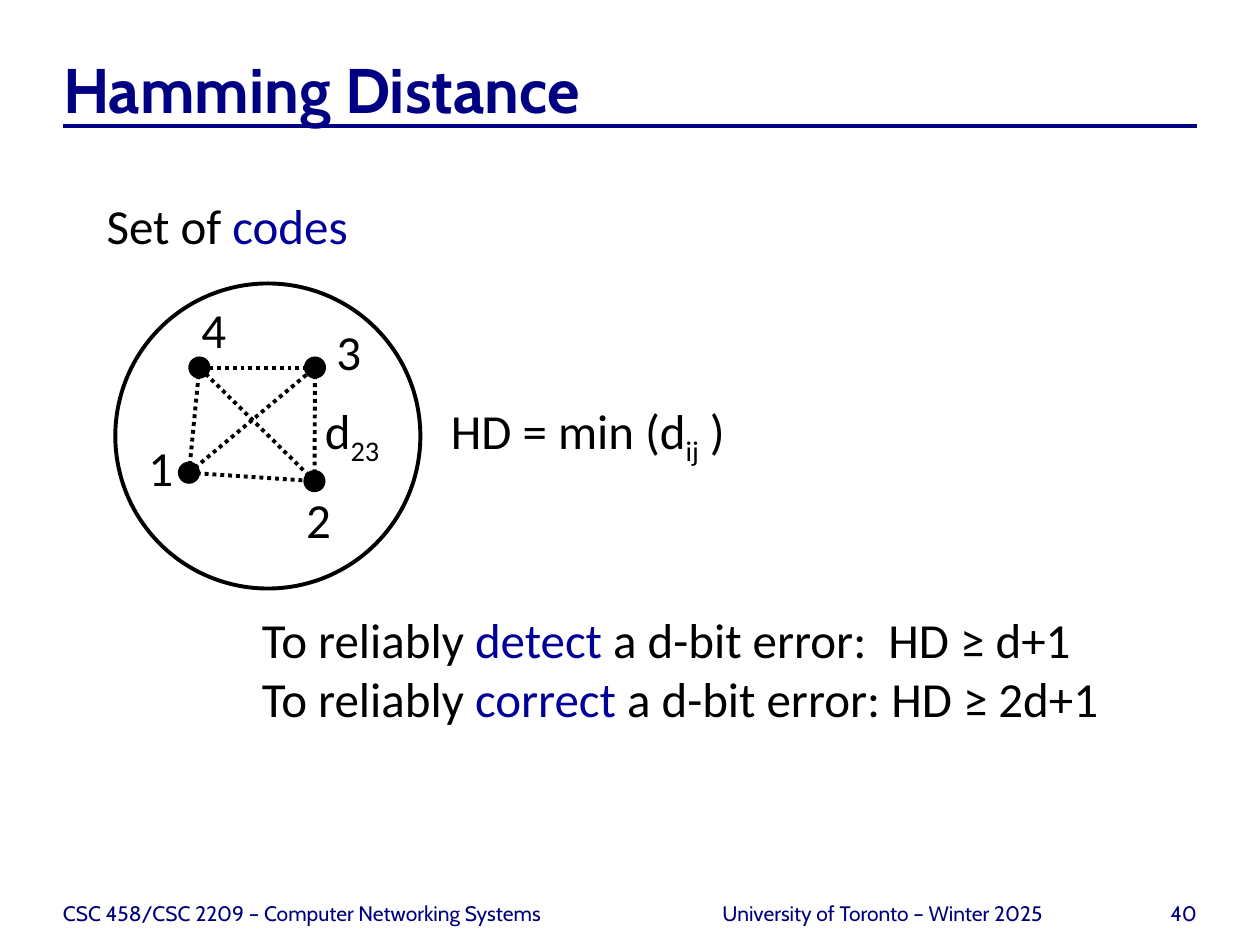
from dataclasses import dataclass
from itertools import combinations
from typing import NamedTuple

from lxml import etree
from pptx import Presentation
from pptx.dml.color import RGBColor
from pptx.enum.dml import MSO_LINE
from pptx.enum.shapes import MSO_CONNECTOR, MSO_SHAPE
from pptx.enum.text import MSO_ANCHOR, MSO_AUTO_SIZE, PP_ALIGN
from pptx.oxml.ns import qn
from pptx.util import Cm, Pt

LEFT, CENTER, RIGHT = PP_ALIGN.LEFT, PP_ALIGN.CENTER, PP_ALIGN.RIGHT
BOTTOM = MSO_ANCHOR.BOTTOM
NO_AUTOFIT, GROW = MSO_AUTO_SIZE.NONE, MSO_AUTO_SIZE.SHAPE_TO_FIT_TEXT
STRAIGHT, OVAL = MSO_CONNECTOR.STRAIGHT, MSO_SHAPE.OVAL
DOTTED = MSO_LINE.ROUND_DOT

BLACK = RGBColor(0x00, 0x00, 0x00)
WHITE = RGBColor(0xFF, 0xFF, 0xFF)
NAVY = RGBColor(0x00, 0x00, 0x82)
FOOTER_NAVY = RGBColor(0x00, 0x00, 0x7C)
TERM_BLUE = RGBColor(0x00, 0x00, 0x99)

HEADING_FONT, BODY_FONT = "Cabin", "Calibri"
MARGIN, CONTENT_WIDTH = 1.27, 22.86
LINE_HEIGHT = 1.45
DOT_SIZE = 0.42
LINE_WEIGHT = 2.25


class Span(NamedTuple):
    text: str
    color: RGBColor = BLACK
    subscript: bool = False


@dataclass
class Label:
    """Unwrapped body text; each line is a list of spans."""
    left: float
    top: float
    width: float
    lines: list[list[Span]]


@dataclass
class Code:
    """A code word at the centre of its dot, and where its number stands."""
    name: str
    x: float
    y: float
    label_left: float
    label_top: float


@dataclass
class Footer:
    text: str
    left: float
    width: float
    alignment: PP_ALIGN


CODES = [
    Code("1", 3.81, 9.53, 2.74, 8.69),
    Code("2", 6.34, 9.7, 5.92, 9.75),
    Code("3", 6.35, 7.41, 6.53, 6.35),
    Code("4", 4.02, 7.41, 3.81, 5.92),
]

RULES = Label(5.03, 12.17, 17.58, [
    [Span("To reliably "), Span("detect", TERM_BLUE), Span(" a d-bit error:  HD ≥ d+1")],
    [Span("To reliably "), Span("correct", TERM_BLUE), Span(" a d-bit error: HD ≥ 2d+1")],
])
FORMULA = Label(8.84, 7.95, 6.15, [
    [Span("HD = min (d"), Span("ij", subscript=True), Span(" )")],
])
DISTANCE = Label(6.3, 7.95, 1.73, [[Span("d"), Span("23", subscript=True)]])
SET_NAME = Label(1.9, 3.81, 5.44, [[Span("Set of "), Span("codes", TERM_BLUE)]])

FOOTERS = [
    Footer("CSC 458/CSC 2209 – Computer Networking Systems", MARGIN, 12.27, LEFT),
    Footer("40", 22.02, 2.11, RIGHT),
    Footer("University of Toronto – Winter 2025", 13.77, 8.05, CENTER),
]


def style_font(font, name: str, size: float, color: RGBColor, bold: bool = False) -> None:
    font.name, font.size, font.bold = name, Pt(size), bold
    font.color.rgb = color


def add_label(page, label: Label) -> None:
    box = page.shapes.add_textbox(Cm(label.left), Cm(label.top), Cm(label.width),
                                  Cm(LINE_HEIGHT * len(label.lines)))
    frame = box.text_frame
    frame.word_wrap, frame.auto_size = False, GROW
    for index, line in enumerate(label.lines):
        para = frame.add_paragraph() if index else frame.paragraphs[0]
        for span in line:
            run = para.add_run()
            run.text = span.text
            style_font(run.font, BODY_FONT, 28, span.color)
            if span.subscript:
                run._r.get_or_add_rPr().set("baseline", "-25000")


def add_circle(page, x: float, y: float, size: float, fill: RGBColor, weight: float) -> None:
    """Draw a black-edged circle centred on x, y."""
    circle = page.shapes.add_shape(OVAL, Cm(x - size / 2), Cm(y - size / 2), Cm(size), Cm(size))
    circle.shadow.inherit = False
    circle.fill.solid()
    circle.fill.fore_color.rgb = fill
    circle.line.color.rgb = BLACK
    circle.line.width = Pt(weight)


def add_line(page, start: tuple[float, float], end: tuple[float, float],
             color: RGBColor, dash: MSO_LINE | None = None) -> None:
    line = page.shapes.add_connector(STRAIGHT, Cm(start[0]), Cm(start[1]), Cm(end[0]), Cm(end[1]))
    line.line.color.rgb = color
    line.line.width = Pt(LINE_WEIGHT)
    if dash is not None:
        line.line.dash_style = dash
    etree.SubElement(line._element.spPr, qn("a:effectLst"))


def add_title(page, text: str) -> None:
    title = page.shapes.title
    title.left, title.top = Cm(MARGIN), Cm(0.84)
    title.width, title.height = Cm(CONTENT_WIDTH), Cm(1.7)
    frame = title.text_frame
    frame.text = text
    frame.auto_size, frame.vertical_anchor = NO_AUTOFIT, BOTTOM
    frame.margin_left = frame.margin_right = frame.margin_bottom = 0
    frame.margin_top = Cm(0.13)
    para = frame.paragraphs[0]
    para.alignment = LEFT
    style_font(para.runs[0].font, HEADING_FONT, 36, NAVY, bold=True)


def add_footer(page, footer: Footer) -> None:
    box = page.shapes.add_textbox(Cm(footer.left), Cm(17.65), Cm(footer.width), Cm(1.02))
    frame = box.text_frame
    frame.text = footer.text
    frame.word_wrap, frame.vertical_anchor = True, BOTTOM
    frame.margin_left = frame.margin_right = frame.margin_top = frame.margin_bottom = 0
    para = frame.paragraphs[0]
    para.alignment = footer.alignment
    style_font(para.runs[0].font, HEADING_FONT, 12, FOOTER_NAVY)


def add_code_set(page) -> None:
    """Draw the set, the distances between all its codes, and the codes."""
    add_circle(page, 5.4, 8.79, 6.15, WHITE, LINE_WEIGHT)
    for first, second in combinations(CODES, 2):
        add_line(page, (first.x, first.y), (second.x, second.y), BLACK, DOTTED)
    for code in CODES:
        add_circle(page, code.x, code.y, DOT_SIZE, BLACK, 0.75)
    for code in CODES:
        add_label(page, Label(code.label_left, code.label_top, 1.02, [[Span(code.name)]]))


def main() -> None:
    deck = Presentation()
    deck.slide_width, deck.slide_height = Cm(25.4), Cm(19.05)
    page = deck.slides.add_slide(deck.slide_layouts.get_by_name("Title Only"))
    add_line(page, (MARGIN, 2.54), (MARGIN + CONTENT_WIDTH, 2.54), NAVY)
    add_title(page, "Hamming Distance")
    add_label(page, RULES)
    add_label(page, FORMULA)
    add_code_set(page)
    add_label(page, DISTANCE)
    add_label(page, SET_NAME)
    for footer in FOOTERS:
        add_footer(page, footer)
    deck.save("out.pptx")


if __name__ == "__main__":
    main()
